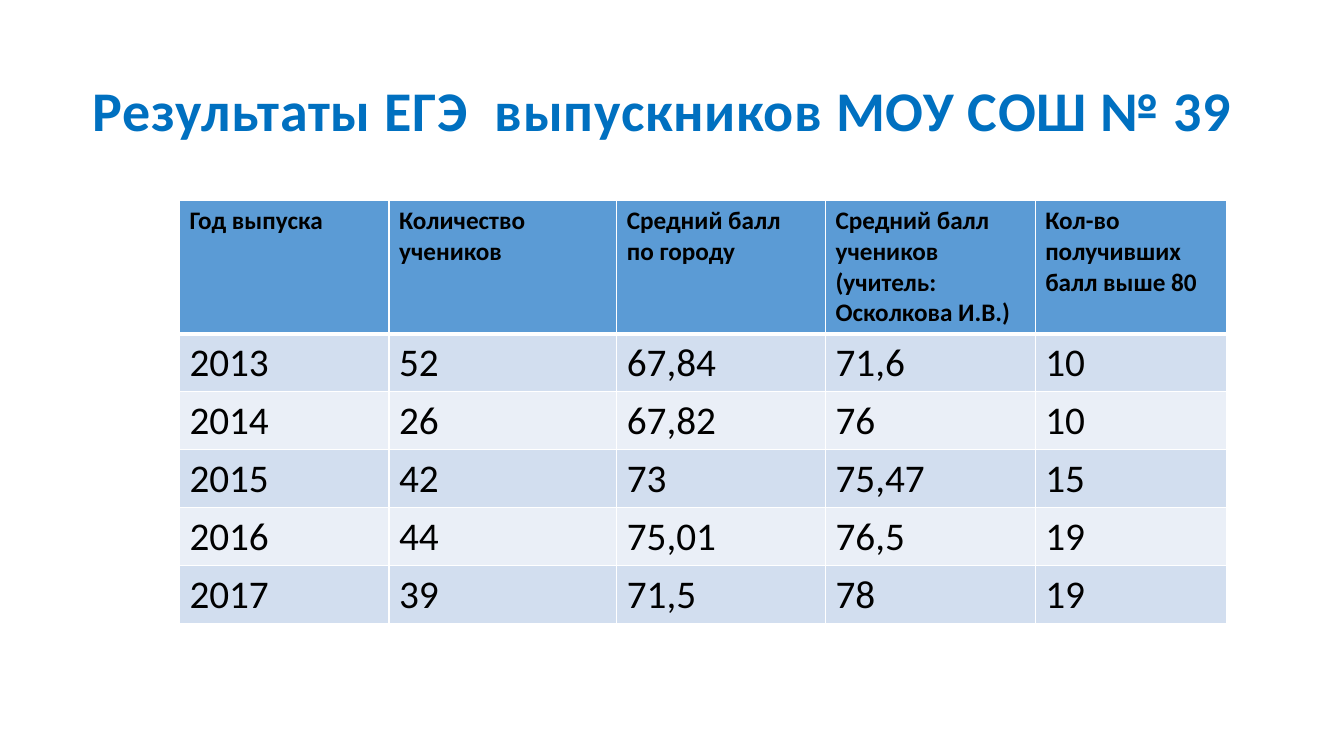
"""Builds the slide with the exam results table."""
from dataclasses import dataclass

from lxml.etree import SubElement
from pptx import Presentation
from pptx.dml.color import RGBColor
from pptx.enum.text import MSO_ANCHOR as Anchor, MSO_AUTO_SIZE as AutoSize, PP_ALIGN as Align
from pptx.oxml.ns import qn
from pptx.util import Inches, Pt

WIDTH, HEIGHT = Inches(13.33), Inches(7.5)
FONT = "Calibri"
BLUE, BLACK, WHITE = "0070C0", "000000", "FFFFFF"
HEADER_FILL, BANDS = "5B9BD5", ("D2DEEF", "EAEFF7")
HEADER_HEIGHT, ROW_HEIGHT = 16.93, 7.6
TABLE_LEFT, TABLE_TOP = 13.35, 26.53


@dataclass
class Column:
    """A table column: width in percent of the slide, heading and values."""
    width: float
    heading: str
    values: tuple[str, ...]


COLUMNS = [
    Column(15.6, "Год выпуска", ("2013", "2014", "2015", "2016", "2017")),
    Column(16.95, "Количество\nучеников", ("52", "26", "42", "44", "39")),
    Column(15.53, "Средний балл\nпо городу", ("67,84", "67,82", "73", "75,01", "71,5")),
    Column(15.6, "Средний балл\nучеников (учитель:\nОсколкова И.В.)",
           ("71,6", "76", "75,47", "76,5", "78")),
    Column(14.25, "Кол-во получивших балл выше 80", ("10", "10", "15", "19", "19")),
]


def across(percent: float) -> int:
    """Return a share of the slide width."""
    return round(WIDTH * percent / 100)


def down(percent: float) -> int:
    """Return a share of the slide height."""
    return round(HEIGHT * percent / 100)


def color(value: str) -> RGBColor:
    """Return the colour of a hex string."""
    return RGBColor.from_string(value)


def write(tf, text: str, *, size: float, fill: str = BLACK, bold: bool = False,
          align=Align.LEFT, line_spacing: float = 1.0, spacing: float = 0) -> None:
    """Fill a text frame with one formatted paragraph per line of text."""
    tf.word_wrap = True
    for i, line in enumerate(text.split("\n")):
        p = tf.paragraphs[0] if i == 0 else tf.add_paragraph()
        p.alignment, p.line_spacing = align, line_spacing
        r = p.add_run()
        r.text = line
        r.font.name, r.font.size, r.font.bold = FONT, Pt(size), bold
        r.font.color.rgb = color(fill)
        if spacing:
            r.font._element.set("spc", str(round(spacing * 100)))


def set_borders(cell, top: float = 1, bottom: float = 1) -> None:
    """Draw white borders around a cell, with widths in points."""
    tc_pr = cell._tc.get_or_add_tcPr()
    for side, width in (("L", 1), ("R", 1), ("T", top), ("B", bottom)):
        ln = SubElement(tc_pr, qn(f"a:ln{side}"), w=str(Pt(width)))
        SubElement(SubElement(ln, qn("a:solidFill")), qn("a:srgbClr"), val=WHITE)


def add_title(s, text: str) -> None:
    """Place and format the slide title."""
    sp = s.shapes.title
    sp.left, sp.top = across(2.63), down(5.33)
    sp.width, sp.height = across(94.37), down(19.33)
    tf = sp.text_frame
    tf.auto_size, tf.vertical_anchor = AutoSize.NONE, Anchor.MIDDLE
    write(tf, text, size=40, fill=BLUE, bold=True, align=Align.CENTER,
          line_spacing=0.9, spacing=0.5)


def add_results(s, columns: list[Column]) -> None:
    """Add the results table with a header row and banded rows."""
    count = len(columns[0].values)
    table = s.shapes.add_table(
        count + 1, len(columns), across(TABLE_LEFT), down(TABLE_TOP),
        across(sum(c.width for c in columns)),
        down(HEADER_HEIGHT + count * ROW_HEIGHT)).table
    for i, row in enumerate(table.rows):
        row.height = down(ROW_HEIGHT if i else HEADER_HEIGHT)
    for j, column in enumerate(columns):
        table.columns[j].width = across(column.width)
        for i, text in enumerate((column.heading, *column.values)):
            cell = table.cell(i, j)
            set_borders(cell, top=3 if i == 1 else 1, bottom=1 if i else 3)
            cell.fill.solid()
            cell.fill.fore_color.rgb = color(BANDS[(i - 1) % 2] if i else HEADER_FILL)
            write(cell.text_frame, text, size=28 if i else 18, bold=i == 0)


def main() -> None:
    """Build and save the presentation."""
    prs = Presentation()
    prs.slide_width, prs.slide_height = WIDTH, HEIGHT
    s = prs.slides.add_slide(prs.slide_layouts[5])
    add_title(s, "Результаты ЕГЭ  выпускников МОУ СОШ № 39 ")
    add_results(s, COLUMNS)
    prs.save("out.pptx")


if __name__ == "__main__":
    main()
